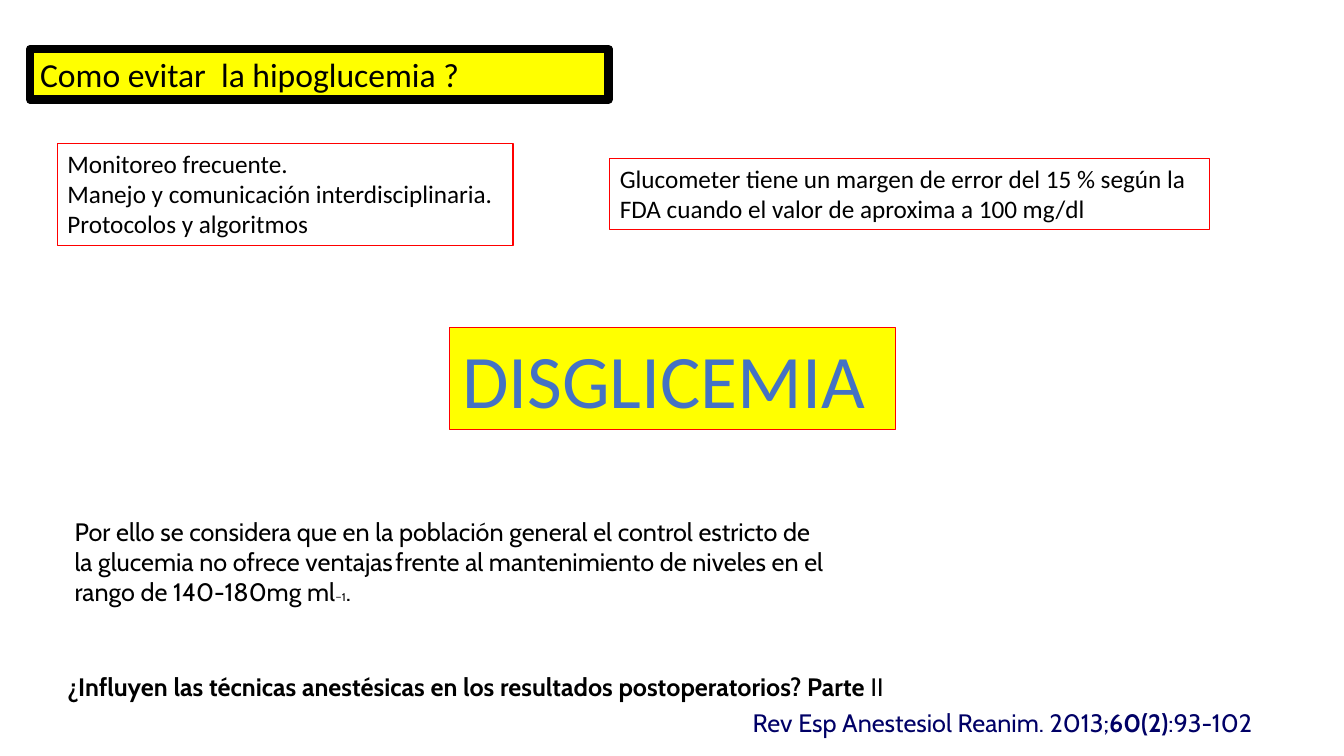
from pptx import Presentation
from pptx import util as u
from pptx.dml.color import RGBColor
from pptx.enum import text

BLACK, RED, YELLOW, BLUE, NAVY = "000000", "FF0000", "FFFF00", "4472C4", "000066"
CABIN = dict(font="Cabin")
SMALL = dict(font="Cabin", size=8)
CITE = dict(font="Cabin", color=NAVY)
THIN = (RED, 0.75)

BOXES = [
    dict(at=(1.45, 3.61, 11.48, 2.57), line=THIN, wrap=False, paras=[
        [("Monitoreo frecuente.", {})],
        [("Manejo y comunicación interdisciplinaria.", {})],
        [("Protocolos y algoritmos", {})]]),
    dict(at=(0.76, 1.24, 14.58, 1.27), fill=YELLOW, line=(BLACK, 6), paras=[
        [("Como evitar  la hipoglucemia ?", dict(size=24))]]),
    dict(at=(15.37, 3.99, 15.11, 1.8), line=THIN, wrap=False, paras=[
        [("Glucometer tiene un margen de error del 15 % según la", {})],
        [("FDA cuando el valor de aproxima a 100 mg/dl", {})]]),
    dict(at=(11.33, 8.26, 11.23, 2.57), fill=YELLOW, line=THIN, wrap=False,
         align=text.PP_ALIGN.CENTER, paras=[
             [("DISGLICEMIA ", dict(size=54, color=BLUE))]]),
    dict(at=(1.63, 12.88, 19.41, 2.57), paras=[[
        ("Por ello se considera que en la población general el control estricto de "
         "la glucemia no ofrece ventajas", CABIN),
        (" ", dict(SMALL, color=NAVY)),
        ("frente al mantenimiento de niveles en el rango de 140-180mg ml", CABIN),
        ("−", dict(font="Lato", size=8)),
        ("1", SMALL),
        (".", CABIN)]]),
    dict(at=(1.45, 16.79, 24.61, 1.02), paras=[[
        ("¿Influyen las técnicas anestésicas en los resultados postoperatorios? Parte ",
         dict(CABIN, bold=True)),
        ("II", CABIN)]]),
    dict(at=(18.72, 17.7, 14, 1.02), wrap=False, paras=[[
        ("Rev Esp Anestesiol Reanim. 2013;", CITE),
        ("60(2)", dict(CITE, bold=True)),
        (":93-102", CITE)]]),
]


def rgb(value):
    return RGBColor.from_string(value)


def add_run(p, words, font="Calibri", size=18, color=BLACK, bold=False):
    r = p.add_run()
    r.text = words
    r.font.name = font
    r.font.size = u.Pt(size)
    r.font.bold = bold
    r.font.color.rgb = rgb(color)


def add_box(s, at, paras, fill=None, line=None, wrap=True, align=text.PP_ALIGN.LEFT):
    sp = s.shapes.add_textbox(*map(u.Cm, at))
    if fill:
        sp.fill.solid()
        sp.fill.fore_color.rgb = rgb(fill)
    if line:
        color, width = line
        sp.line.color.rgb = rgb(color)
        sp.line.width = u.Pt(width)
    tf = sp.text_frame
    tf.word_wrap = wrap
    tf.auto_size = text.MSO_AUTO_SIZE.SHAPE_TO_FIT_TEXT
    for i, runs in enumerate(paras):
        p = tf.add_paragraph() if i else tf.paragraphs[0]
        p.alignment = align
        for words, style in runs:
            add_run(p, words, **style)


prs = Presentation()
prs.slide_width, prs.slide_height = u.Cm(33.87), u.Cm(19.05)
s = prs.slides.add_slide(prs.slide_layouts[6])
for box in BOXES:
    add_box(s, **box)
prs.save("out.pptx")
